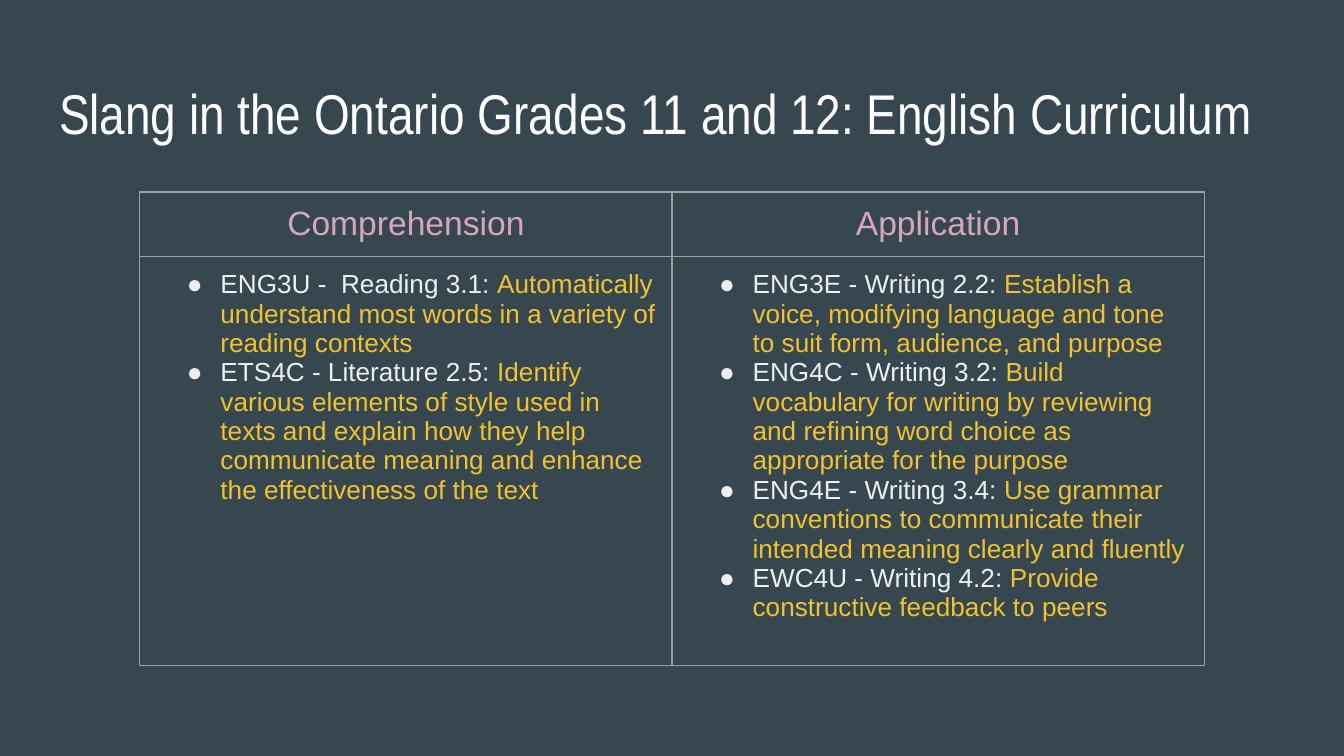
"""Build the slide on slang in the Ontario English curriculum."""
from dataclasses import dataclass

from lxml import etree
from pptx import Presentation, util as u
from pptx.dml.color import RGBColor
from pptx.enum import text
from pptx.oxml import ns


@dataclass(frozen=True)
class Theme:
    background: str = "37474F"
    title: str = "FFFFFF"
    heading: str = "D5A6BD"
    course: str = "EFEFEF"
    expectation: str = "F1C232"
    border: str = "9E9E9E"
    title_font: str = "Arial Narrow"
    body_font: str = "Arial"
    title_size: float = 30
    heading_size: float = 18
    body_size: float = 14
    border_width: float = 0.75
    inset: float = 0.1


@dataclass(frozen=True)
class Expectation:
    course: str
    skill: str


@dataclass(frozen=True)
class Strand:
    heading: str
    expectations: tuple[Expectation, ...]


THEME = Theme()
WIDTH = u.Inches(10)
HEIGHT = WIDTH * 9 // 16
MARGIN = 0.034
GRID_LEFT, GRID_TOP = 0.104, 0.254
COLUMN_WIDTH = 0.396
ROW_HEIGHTS = (0.085, 0.541)

STRANDS = (
    Strand("Comprehension", (
        Expectation("ENG3U -  Reading 3.1: ",
                    "Automatically understand most words in a variety of reading contexts"),
        Expectation("ETS4C - Literature 2.5:",
                    " Identify various elements of style used in texts and explain how they "
                    "help communicate meaning and enhance the effectiveness of the text"),
    )),
    Strand("Application", (
        Expectation("ENG3E - Writing 2.2: ",
                    "Establish a voice, modifying language and tone to suit form, "
                    "audience, and purpose"),
        Expectation("ENG4C - Writing 3.2: ",
                    "Build vocabulary for writing by reviewing and refining word choice "
                    "as appropriate for the purpose"),
        Expectation("ENG4E - Writing 3.4: ",
                    "Use grammar conventions to communicate their intended meaning "
                    "clearly and fluently"),
        Expectation("EWC4U - Writing 4.2: ", "Provide constructive feedback to peers"),
    )),
)


def write(paragraph, words: str, *, color: str, size: float = THEME.body_size,
          font: str = THEME.body_font, align=text.PP_ALIGN.LEFT) -> None:
    paragraph.alignment = align
    run = paragraph.add_run()
    run.text = words
    run.font.name = font
    run.font.size = u.Pt(size)
    run.font.bold = False
    run.font.color.rgb = RGBColor.from_string(color)


def add_bullet(paragraph) -> None:
    properties = paragraph._p.get_or_add_pPr()
    properties.set("marL", str(u.Inches(0.5)))
    properties.set("indent", str(u.Inches(-0.25)))
    tint = etree.SubElement(properties, ns.qn("a:buClr"))
    etree.SubElement(tint, ns.qn("a:srgbClr"), val=THEME.course)
    etree.SubElement(properties, ns.qn("a:buSzPts"), val=str(int(THEME.body_size * 100)))
    etree.SubElement(properties, ns.qn("a:buFont"), typeface=THEME.body_font)
    etree.SubElement(properties, ns.qn("a:buChar"), char="●")


def set_insets(target) -> None:
    for side in ("left", "right", "top", "bottom"):
        setattr(target, f"margin_{side}", u.Inches(THEME.inset))
    target.vertical_anchor = text.MSO_ANCHOR.TOP


def format_cell(cell) -> None:
    set_insets(cell)
    cell.fill.background()
    properties = cell._tc.get_or_add_tcPr()
    for position, side in enumerate(("lnL", "lnR", "lnT", "lnB")):
        line = etree.Element(ns.qn(f"a:{side}"), w=str(u.Pt(THEME.border_width)))
        fill = etree.SubElement(line, ns.qn("a:solidFill"))
        etree.SubElement(fill, ns.qn("a:srgbClr"), val=THEME.border)
        properties.insert(position, line)


def draw_title(slide, words: str) -> None:
    title = slide.shapes.title
    title.left, title.top = int(WIDTH * MARGIN), int(HEIGHT * 0.086)
    title.width, title.height = int(WIDTH * (1 - 2 * MARGIN)), int(HEIGHT * 0.112)
    frame = title.text_frame
    frame.word_wrap = True
    frame.auto_size = text.MSO_AUTO_SIZE.NONE
    set_insets(frame)
    write(frame.paragraphs[0], words, color=THEME.title,
          size=THEME.title_size, font=THEME.title_font)


def draw_strand(table, column: int, strand: Strand) -> None:
    heading, body = table.cell(0, column), table.cell(1, column)
    format_cell(heading)
    format_cell(body)
    write(heading.text_frame.paragraphs[0], strand.heading, color=THEME.heading,
          size=THEME.heading_size, align=text.PP_ALIGN.CENTER)
    frame = body.text_frame
    for index, expectation in enumerate(strand.expectations):
        paragraph = frame.add_paragraph() if index else frame.paragraphs[0]
        add_bullet(paragraph)
        paragraph.font.size = u.Pt(THEME.body_size)
        write(paragraph, expectation.course, color=THEME.course)
        write(paragraph, expectation.skill, color=THEME.expectation)


def draw_strands(slide, strands: tuple[Strand, ...]) -> None:
    table = slide.shapes.add_table(
        len(ROW_HEIGHTS), len(strands), int(WIDTH * GRID_LEFT), int(HEIGHT * GRID_TOP),
        int(WIDTH * COLUMN_WIDTH * len(strands)), int(HEIGHT * sum(ROW_HEIGHTS))).table
    table.first_row = table.horz_banding = False
    for row, share in zip(table.rows, ROW_HEIGHTS):
        row.height = int(HEIGHT * share)
    for column, strand in enumerate(strands):
        table.columns[column].width = int(WIDTH * COLUMN_WIDTH)
        draw_strand(table, column, strand)


def main() -> None:
    deck = Presentation()
    deck.slide_width, deck.slide_height = WIDTH, HEIGHT
    slide = deck.slides.add_slide(deck.slide_layouts.get_by_name("Title Only"))
    slide.background.fill.solid()
    slide.background.fill.fore_color.rgb = RGBColor.from_string(THEME.background)
    draw_title(slide, "Slang in the Ontario Grades 11 and 12: English Curriculum")
    draw_strands(slide, STRANDS)
    deck.save("out.pptx")


if __name__ == "__main__":
    main()
